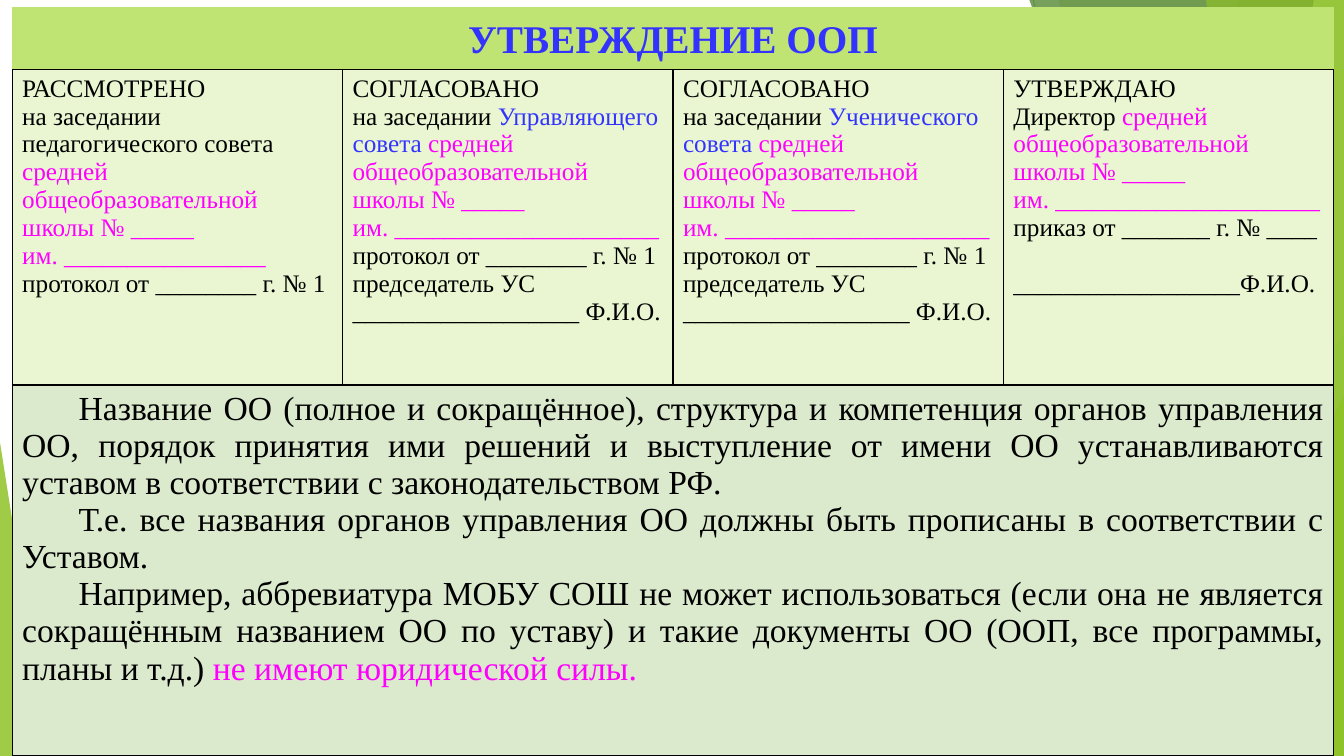
from lxml import etree
from pptx import Presentation
from pptx.dml.color import RGBColor
from pptx.enum.shapes import MSO_CONNECTOR, MSO_SHAPE
from pptx.enum.text import MSO_ANCHOR, PP_ALIGN
from pptx.oxml.ns import qn
from pptx.util import Inches, Pt

LINE = MSO_CONNECTOR.STRAIGHT
TRIANGLE = MSO_SHAPE.ISOSCELES_TRIANGLE
MIDDLE = MSO_ANCHOR.MIDDLE
CENTER = PP_ALIGN.CENTER
JUSTIFY = PP_ALIGN.JUSTIFY

FONT = "Times New Roman"
WIDE, HIGH = 13.33, 7.5
COLORS = {
    "black": "000000", "blue": "3333FF", "pink": "FF00FF",
    "grey": "BFBFBF", "pale": "D9D9D9",
    "green": "90C226", "leaf": "54A021", "dark": "3F7819", "lime": "C0E474",
    "light": "EAF6D1", "sage": "DBE9CD",
}
LINES = [("grey", 10.25, 0, 11.58, HIGH), ("pale", WIDE, 4.03, 8.12, HIGH)]
BACK_BANDS = [("green", 30, 12.28, 10.04), ("green", 20, 10.5, 11.83)]
FRONT_BANDS = [("dark", 70, 10.21, 12.91), ("lime", 70, 13.03, 11.92),
               ("green", 65, 11.96, 13.18)]
BACK_PEAK = ("leaf", 72, 9.77, 3.33, 3.56, 1)
FRONT_PEAKS = [("green", 80, 11.34, 3.93, 1.99, 1),
               ("green", 85, 0, 4.39, 0.49, 0)]

SCHOOL = ("средней общеобразовательной", "pink")
NUMBER = [("школы № _____", "pink")]
RECORD = [("протокол от ________ г. № 1", "black")]


def named(count):
    """Return the line for the name of the school."""
    return [("им. " + "_" * count, "pink")]


def council(name):
    """Return the approval lines of a council."""
    return [
        [("СОГЛАСОВАНО", "black")],
        [("на заседании ", "black"), (name + " совета ", "blue"), SCHOOL],
        NUMBER, named(21), RECORD,
        [("председатель УС", "black")],
        [("_" * 18 + " Ф.И.О.", "black")],
    ]


STAMPS = [
    [
        [("РАССМОТРЕНО", "black")],
        [("на заседании педагогического совета ", "black"), SCHOOL],
        NUMBER, named(16), RECORD,
    ],
    council("Управляющего"),
    council("Ученического"),
    [
        [("УТВЕРЖДАЮ", "black")],
        [("Директор ", "black"), SCHOOL],
        NUMBER, named(21),
        [("приказ от _______ г. № ____", "black")],
        [("_" * 18 + "Ф.И.О.", "black")],
    ],
]
RULES = [
    [("Название ОО (полное и сокращённое), структура и компетенция органов "
      "управления ОО, порядок принятия ими решений и выступление от имени ОО "
      "устанавливаются уставом в соответствии с законодательством РФ.", "black")],
    [("Т.е. все названия органов управления ОО должны быть прописаны "
      "в соответствии с Уставом.", "black")],
    [("Например, аббревиатура МОБУ СОШ не может использоваться (если она "
      "не является сокращённым названием ОО по уставу) и такие документы ОО "
      "(ООП, все программы, планы и т.д.) ", "black"),
     ("не имеют юридической силы.", "pink")],
]


def rgb(name):
    """Look up a colour by name."""
    return RGBColor.from_string(COLORS[name])


def paint(item, color):
    """Give a shape or cell a solid fill."""
    item.fill.solid()
    item.fill.fore_color.rgb = rgb(color)


def tint(shape, color, alpha):
    """Fill a shape with a see-through colour and drop its line and shadow."""
    paint(shape, color)
    shape.line.fill.background()
    shape.shadow.inherit = False
    tone = shape._element.spPr.find(".//" + qn("a:srgbClr"))
    etree.SubElement(tone, qn("a:alpha"), val=str(alpha * 1000))


def add_line(slide, color, *ends):
    """Draw a thin line."""
    line = slide.shapes.add_connector(LINE, *map(Inches, ends))
    line.line.color.rgb = rgb(color)
    line.line.width = Pt(0.75)
    etree.SubElement(line._element.spPr, qn("a:effectLst"))


def add_band(slide, color, alpha, top, foot):
    """Draw a slanted band that reaches the right edge."""
    form = slide.shapes.build_freeform(Inches(top), 0)
    ends = [(WIDE, 0), (WIDE, HIGH), (foot, HIGH)]
    form.add_line_segments([(Inches(x), Inches(y)) for x, y in ends])
    tint(form.convert_to_shape(), color, alpha)


def add_peak(slide, color, alpha, left, top, width, tip):
    """Draw a right triangle that stands on the bottom edge."""
    box = map(Inches, (left, top, width, HIGH - top))
    peak = slide.shapes.add_shape(TRIANGLE, *box)
    peak.adjustments[0] = tip
    tint(peak, color, alpha)


def add_decor(slide):
    """Draw the green facets behind the content."""
    for line in LINES:
        add_line(slide, *line)
    for band in BACK_BANDS:
        add_band(slide, *band)
    add_peak(slide, *BACK_PEAK)
    for band in FRONT_BANDS:
        add_band(slide, *band)
    for peak in FRONT_PEAKS:
        add_peak(slide, *peak)


def set_title(slide, text):
    """Place the title bar above the decor."""
    title = slide.shapes.title
    slide.shapes._spTree.append(title._element)
    title.left, title.top = Inches(0.12), Inches(0.07)
    title.width, title.height = Inches(13.11), Inches(0.62)
    paint(title, "lime")
    frame = title.text_frame
    frame.text = text
    frame.vertical_anchor = MIDDLE
    para = frame.paragraphs[0]
    para.alignment = CENTER
    font = para.font
    font.name, font.size, font.bold = FONT, Pt(28), True
    font.color.rgb = rgb("blue")


def add_edges(cell):
    """Draw black borders around a cell."""
    props = cell._tc.get_or_add_tcPr()
    for spot, side in enumerate(("a:lnL", "a:lnR", "a:lnT", "a:lnB")):
        edge = etree.Element(qn(side), w=str(Pt(1)))
        fill = etree.SubElement(edge, qn("a:solidFill"))
        etree.SubElement(fill, qn("a:srgbClr"), val=COLORS["black"])
        props.insert(spot, edge)


def fill_cell(cell, paras, size):
    """Write coloured runs into a cell."""
    frame = cell.text_frame
    for spot, runs in enumerate(paras):
        para = frame.add_paragraph() if spot else frame.paragraphs[0]
        para.font.name, para.font.size = FONT, Pt(size)
        for text, color in runs:
            run = para.add_run()
            run.text = text
            run.font.color.rgb = rgb(color)


def add_grid(slide):
    """Build the table of approval stamps and rules."""
    box = map(Inches, (0.12, 0.69, 13.11, 6.81))
    table = slide.shapes.add_table(2, 4, *box).table
    table.first_row = table.horz_banding = False
    for row, height in zip(table.rows, (3.13, 3.68)):
        row.height = Inches(height)
    for spot, stamp in enumerate(STAMPS):
        fill_cell(table.cell(0, spot), stamp, 18)
    table.cell(0, 3).text_frame.paragraphs[-1].space_before = Pt(20)
    wide = table.cell(1, 0)
    wide.merge(table.cell(1, 3))
    fill_cell(wide, RULES, 24)
    for para in wide.text_frame.paragraphs:
        para.alignment = JUSTIFY
        para._p.get_or_add_pPr().set("indent", str(Inches(0.56)))
    for row, color in enumerate(("light", "sage")):
        for col in range(4):
            cell = table.cell(row, col)
            paint(cell, color)
            add_edges(cell)


def main():
    """Build and save the slide."""
    deck = Presentation()
    deck.slide_width, deck.slide_height = Inches(WIDE), Inches(HIGH)
    slide = deck.slides.add_slide(deck.slide_layouts[5])
    add_decor(slide)
    set_title(slide, "УТВЕРЖДЕНИЕ ООП")
    add_grid(slide)
    deck.save("out.pptx")


if __name__ == "__main__":
    main()
